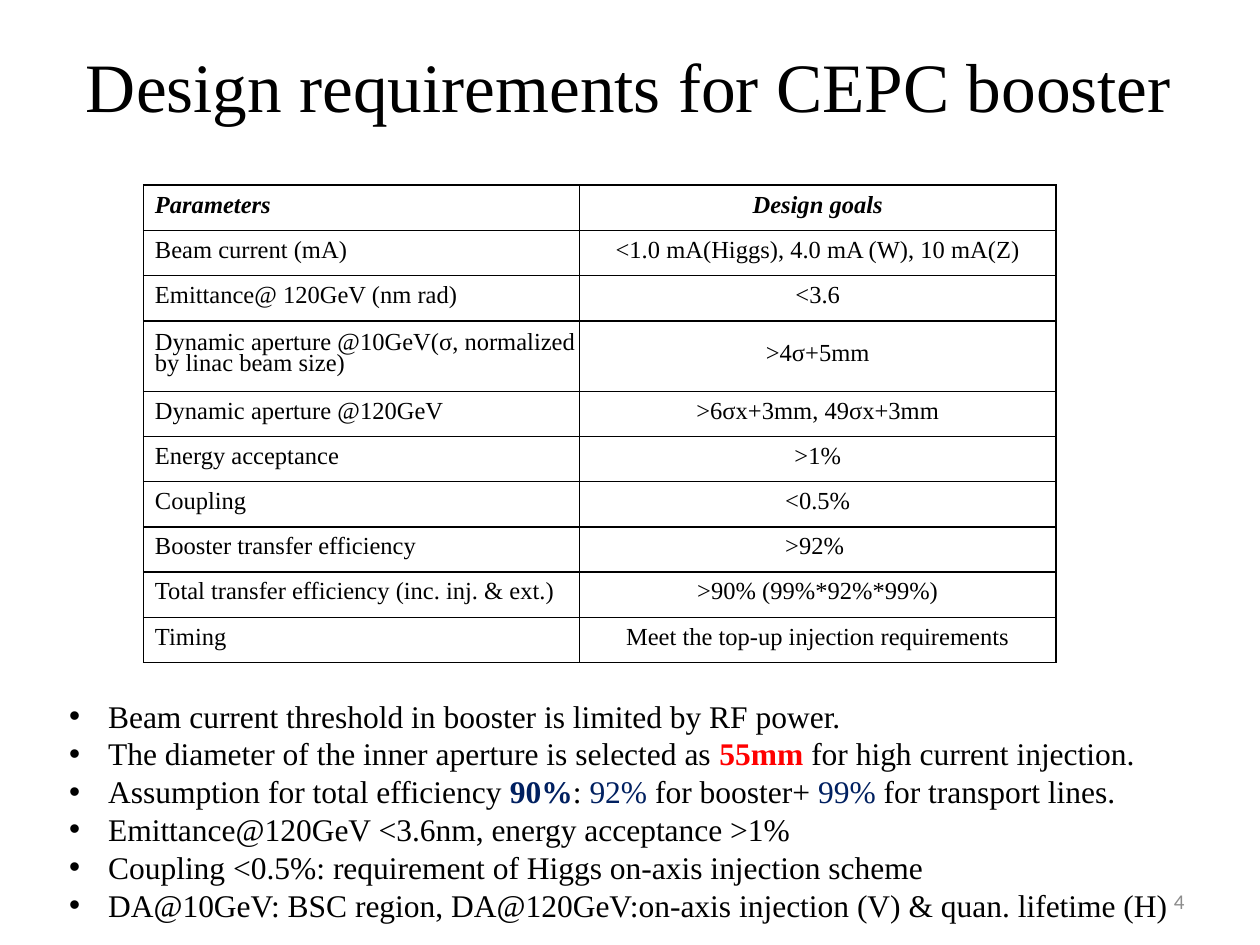
from lxml.etree import SubElement
from pptx import Presentation
from pptx.dml.color import RGBColor
from pptx.enum.text import MSO_ANCHOR, PP_ALIGN
from pptx.oxml.ns import qn
from pptx.util import Inches, Pt

COLORS = {"ink": "000000", "red": "FF0000", "navy": "002060",
          "grey": "8C8C8C", "paper": "FFFFFF"}
SERIF = "Times New Roman"
TITLE = "Design requirements for CEPC booster"
REQUIREMENTS = [
    ("Parameters", "Design goals"),
    ("Beam current (mA)", "<1.0 mA(Higgs), 4.0 mA (W), 10 mA(Z)"),
    ("Emittance@ 120GeV (nm rad)", "<3.6"),
    ("Dynamic aperture @10GeV(σ, normalized by linac beam size)", ">4σ+5mm"),
    ("Dynamic aperture @120GeV", ">6σx+3mm, 49σx+3mm"),
    ("Energy acceptance", ">1%"),
    ("Coupling", "<0.5%"),
    ("Booster transfer efficiency", ">92% "),
    ("Total transfer efficiency (inc. inj. & ext.)", ">90% (99%*92%*99%)"),
    ("Timing", "Meet the top-up injection requirements"),
]
TALL_ROW = 3
# Each remark is a list of runs: (text, format that differs from plain)
REMARKS = [
    [("Beam current threshold in booster is limited by RF power.", {})],
    [("The diameter of the inner aperture is selected as", {}),
     (" 55mm ", {"color": "red", "bold": True}),
     ("for high current injection.", {})],
    [("Assumption for total efficiency ", {}),
     ("90%", {"color": "navy", "bold": True}),
     (": ", {}),
     ("92%", {"color": "navy"}),
     (" for booster+ ", {}),
     ("99%", {"color": "navy"}),
     (" for transport lines.", {})],
    [("Emittance@120GeV <3.6nm, energy acceptance >1%", {})],
    [("Coupling <0.5%: requirement of Higgs on-axis injection scheme", {})],
    [("DA@10GeV: BSC region, DA@120GeV:on-axis injection (V) & quan. lifetime (H)", {})],
]


def write(paragraph, text, size=18, color="ink", font=SERIF, bold=False,
          italic=False, align=PP_ALIGN.LEFT):
    """Append one formatted run to the paragraph."""
    paragraph.alignment = align
    run = paragraph.add_run()
    run.text = text
    run.font.name = font
    run.font.size = Pt(size)
    run.font.bold = bold
    run.font.italic = italic
    run.font.color.rgb = RGBColor.from_string(COLORS[color])


def indent(paragraph, left, first=0):
    properties = paragraph._p.get_or_add_pPr()
    properties.set("marL", str(Inches(left)))
    properties.set("indent", str(Inches(first)))
    return properties


def border_cell(cell):
    properties = cell._tc.get_or_add_tcPr()
    for position, side in enumerate(("a:lnL", "a:lnR", "a:lnT", "a:lnB")):
        line = SubElement(properties, qn(side), w=str(Pt(1)))
        fill = SubElement(line, qn("a:solidFill"))
        SubElement(fill, qn("a:srgbClr"), val=COLORS["ink"])
        properties.insert(position, line)  # borders precede the fill


def add_title(slide, left, top, width, height):
    title = slide.shapes.title
    title.left, title.top = Inches(left), Inches(top)
    title.width, title.height = Inches(width), Inches(height)
    title.text_frame.vertical_anchor = MSO_ANCHOR.MIDDLE
    write(title.text_frame.paragraphs[0], TITLE, size=39.6, align=PP_ALIGN.CENTER)


def add_requirements(slide, left, top, width, height):
    table = slide.shapes.add_table(
        len(REQUIREMENTS), 2, Inches(left), Inches(top),
        Inches(width), Inches(height)).table
    parameter_width, tall = 3.46, 0.56
    table.columns[0].width = Inches(parameter_width)
    table.columns[1].width = Inches(width - parameter_width)
    normal = (height - tall) / (len(REQUIREMENTS) - 1)
    for r, texts in enumerate(REQUIREMENTS):
        table.rows[r].height = Inches(tall if r == TALL_ROW else normal)
        for c, text in enumerate(texts):
            cell = table.cell(r, c)
            cell.fill.solid()
            cell.fill.fore_color.rgb = RGBColor.from_string(COLORS["paper"])
            border_cell(cell)
            cell.vertical_anchor = MSO_ANCHOR.MIDDLE
            cell.margin_left = cell.margin_right = Inches(0.01)
            cell.margin_top = cell.margin_bottom = Inches(0.07)
            paragraph = cell.text_frame.paragraphs[0]
            paragraph.line_spacing = Pt(12)
            if c == 0:
                indent(paragraph, 0.08)
            write(paragraph, text, size=14, bold=r == 0, italic=r == 0,
                  align=PP_ALIGN.CENTER if c else PP_ALIGN.LEFT)


def add_text_frame(slide, left, top, width, height):
    frame = slide.shapes.add_textbox(
        Inches(left), Inches(top), Inches(width), Inches(height)).text_frame
    frame.word_wrap = True
    return frame


def add_remarks(slide, left, top, width, height):
    frame = add_text_frame(slide, left, top, width, height)
    for i, runs in enumerate(REMARKS):
        paragraph = frame.add_paragraph() if i else frame.paragraphs[0]
        properties = indent(paragraph, 0.31, -0.31)
        SubElement(properties, qn("a:buFont"), typeface="Arial")
        SubElement(properties, qn("a:buChar"), char="•")
        for text, style in runs:
            write(paragraph, text, **style)


def add_page_number(slide, left, top, width, height):
    frame = add_text_frame(slide, left, top, width, height)
    frame.vertical_anchor = MSO_ANCHOR.MIDDLE
    write(frame.paragraphs[0], "4", size=12, color="grey", font="Calibri",
          align=PP_ALIGN.RIGHT)


def main():
    deck = Presentation()
    deck.slide_width, deck.slide_height = Inches(10), Inches(7.5)
    slide = deck.slides.add_slide(deck.slide_layouts[5])
    add_title(slide, 0.49, 0.05, 9, 1.25)
    add_remarks(slide, 0.45, 5.48, 9.64, 1.92)
    add_requirements(slide, 1.14, 1.47, 7.24, 3.79)
    add_page_number(slide, 7.17, 6.95, 2.33, 0.4)
    deck.save("out.pptx")


if __name__ == "__main__":
    main()
